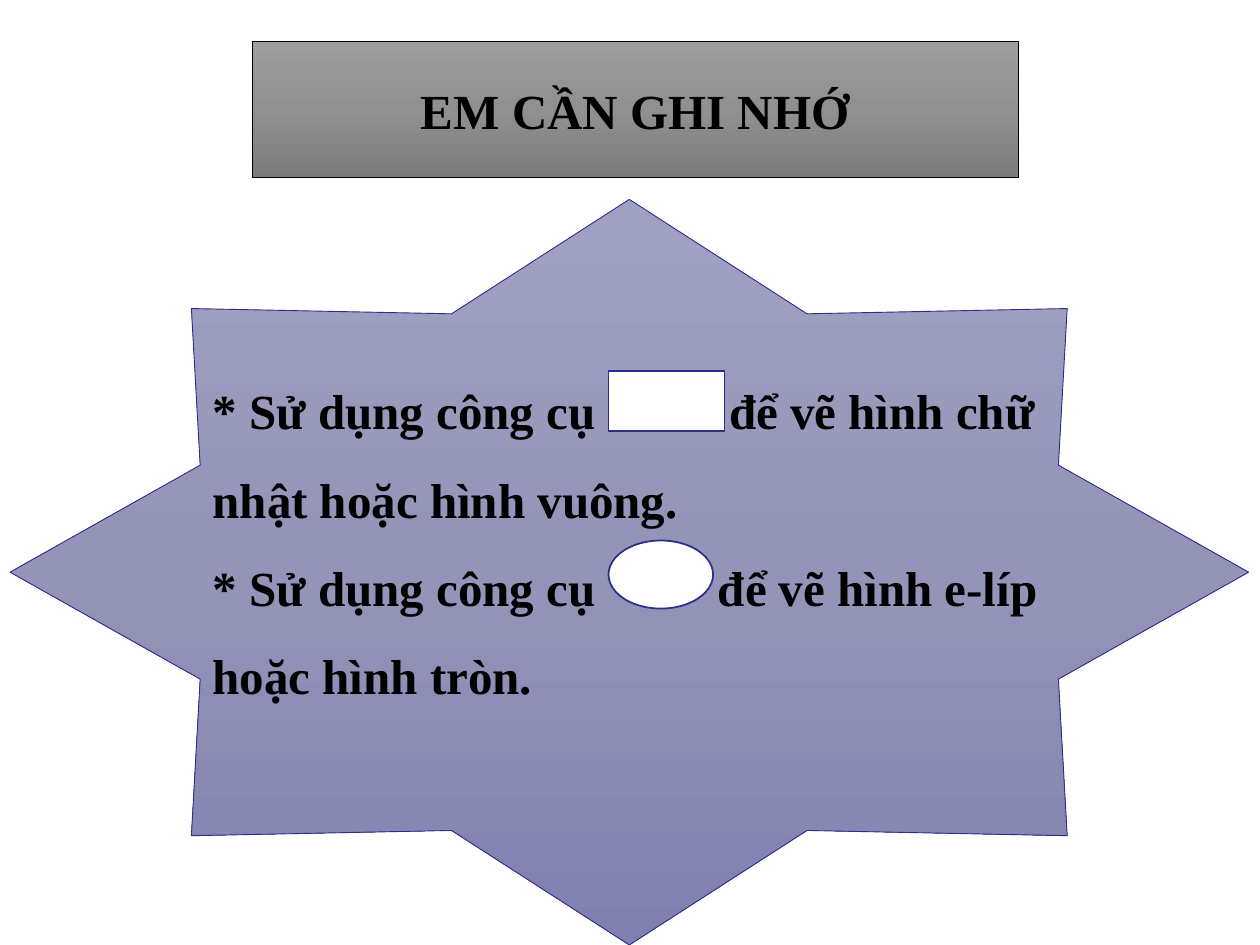
from copy import deepcopy
from dataclasses import dataclass

from lxml.etree import SubElement
from pptx import Presentation
from pptx.dml.color import RGBColor
from pptx.enum.shapes import MSO_SHAPE as Preset
from pptx.enum.text import MSO_ANCHOR as Anchor, PP_ALIGN as Align
from pptx.oxml.ns import qn
from pptx.util import Inches, Pt


@dataclass(frozen=True)
class Theme:
    font: str = "Times New Roman"
    size: float = 28
    text: str = "000000"
    outline: str = "2D2D8A"
    banner_outline: str = "000000"
    tool: str = "FFFFFF"
    banner: tuple = ("9D9D9D", "909090", "7C7C7C")
    star: tuple = ("A0A0C3", "9494B8", "8080B0")
    thin: float = 0.5
    medium: float = 1


THEME = Theme()
WIDTH, HEIGHT = 10, 7.5
LINE_SPACING = 1.5
LINE_HEIGHT = 0.7

TITLE = "EM CẦN GHI NHỚ"
RULES = [
    ("* Sử dụng công cụ\tđể vẽ hình chữ nhật hoặc hình vuông.", 4.1),
    ("* Sử dụng công cụ\tđể vẽ hình e-líp hoặc hình tròn.", 4.01),
]
TOOLS = [
    (Preset.RECTANGLE, (0.483, 0.393, 0.092, 0.063)),
    (Preset.OVAL, (0.483, 0.572, 0.083, 0.072)),
]
BANNER_BOX = (0.2, 0.044, 0.608, 0.144)
STAR_BOX = (0.008, 0.211, 0.983, 0.789)


def add_figure(slide, preset, box, colors, outline, weight):
    left, top, width, height = box
    figure = slide.shapes.add_shape(
        preset, Inches(left * WIDTH), Inches(top * HEIGHT),
        Inches(width * WIDTH), Inches(height * HEIGHT))
    figure.shadow.inherit = False
    figure.line.color.rgb = RGBColor.from_string(outline)
    figure.line.width = Pt(weight)
    if len(colors) == 1:
        figure.fill.solid()
        figure.fill.fore_color.rgb = RGBColor.from_string(colors[0])
    else:
        shade(figure, colors)
    return figure


def shade(figure, colors):
    figure.fill.gradient()
    figure.fill.gradient_angle = 270
    stops = figure.element.spPr.find(".//" + qn("a:gsLst"))
    for _ in colors[2:]:
        stops.insert(1, deepcopy(stops[0]))
    for index, (stop, color) in enumerate(zip(figure.fill.gradient_stops, colors)):
        stop.position = index / (len(colors) - 1)
        stop.color.rgb = RGBColor.from_string(color)


def write(figure, lines, align):
    frame = figure.text_frame
    frame.word_wrap = True
    frame.vertical_anchor = Anchor.MIDDLE
    for index, line in enumerate(lines):
        paragraph = frame.add_paragraph() if index else frame.paragraphs[0]
        paragraph.text = line
        paragraph.alignment = align
        paragraph.font.name = THEME.font
        paragraph.font.size = Pt(THEME.size)
        paragraph.font.bold = True
        paragraph.font.color.rgb = RGBColor.from_string(THEME.text)
    return frame


def add_tab(paragraph, position):
    properties = paragraph._p.get_or_add_pPr()
    tabs = SubElement(properties, qn("a:tabLst"))
    SubElement(tabs, qn("a:tab"), pos=str(Inches(position)), algn="l")
    defaults = properties.find(qn("a:defRPr"))
    if defaults is not None:
        defaults.addprevious(tabs)


def main():
    deck = Presentation()
    deck.slide_width, deck.slide_height = Inches(WIDTH), Inches(HEIGHT)
    slide = deck.slides.add_slide(deck.slide_layouts[6])

    star = add_figure(slide, Preset.STAR_8_POINT, STAR_BOX, THEME.star,
                      THEME.outline, THEME.thin)
    rules = write(star, [line for line, _ in RULES], Align.LEFT)
    rules.margin_bottom = Inches(0.05 + LINE_HEIGHT)
    for paragraph, (_, tab) in zip(rules.paragraphs, RULES):
        paragraph.line_spacing = LINE_SPACING
        add_tab(paragraph, tab)

    banner = add_figure(slide, Preset.RECTANGLE, BANNER_BOX, THEME.banner,
                        THEME.banner_outline, THEME.thin)
    write(banner, [TITLE], Align.CENTER)

    for preset, box in TOOLS:
        add_figure(slide, preset, box, (THEME.tool,), THEME.outline, THEME.medium)

    deck.save("out.pptx")


if __name__ == "__main__":
    main()
